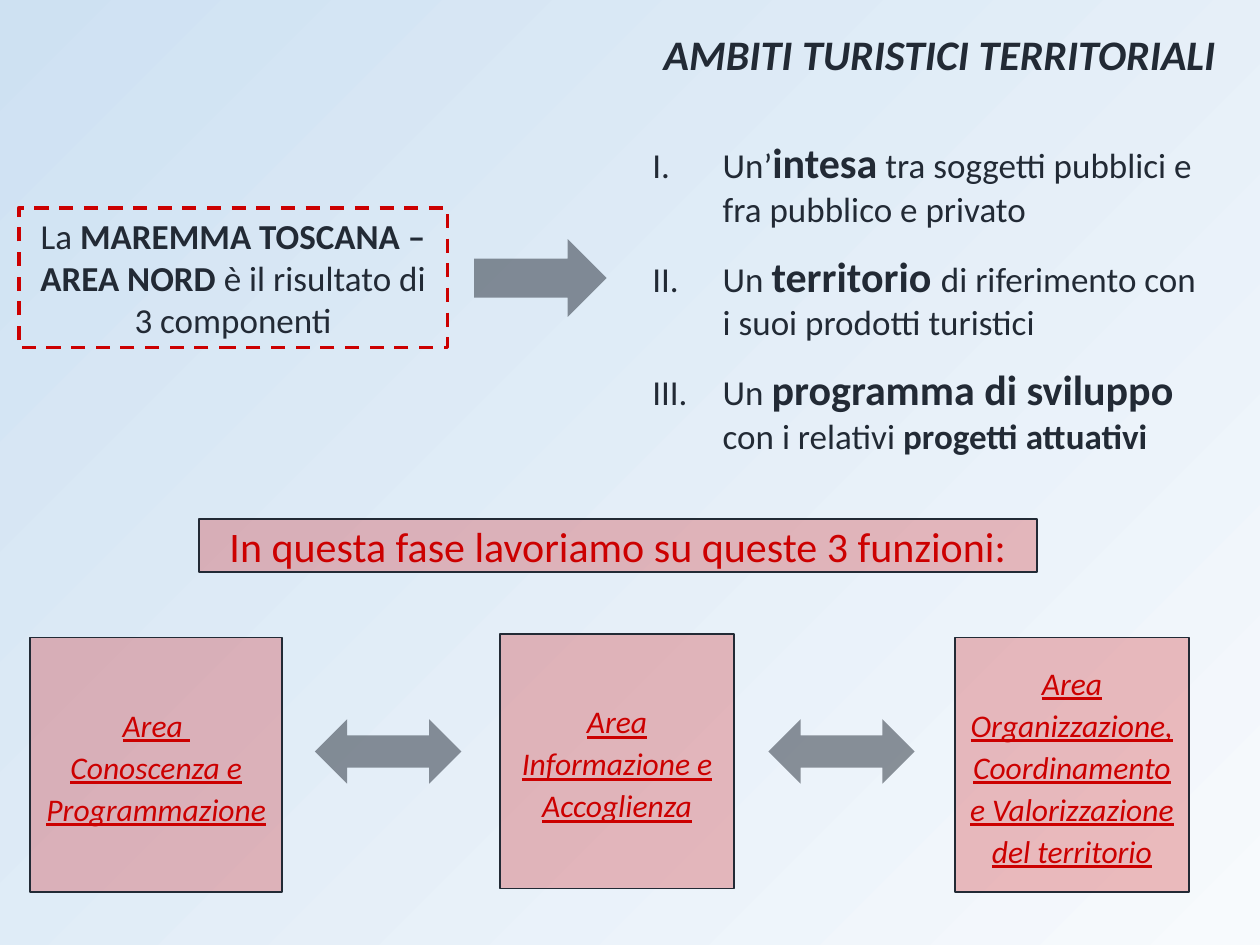
from lxml import etree
from pptx import Presentation
from pptx.dml.color import RGBColor
from pptx.enum.dml import MSO_LINE
from pptx.enum.shapes import MSO_SHAPE as SHAPE
from pptx.enum.text import MSO_ANCHOR as ANCHOR, MSO_AUTO_SIZE as AUTO, PP_ALIGN as ALIGN
from pptx.oxml.ns import qn
from pptx.util import Cm, Pt

DARK = RGBColor(0x22, 0x2A, 0x35)
RED = RGBColor(0xCC, 0x00, 0x00)
PALE = RGBColor(0xF7, 0xFA, 0xFD)
SKY = RGBColor(0xCE, 0xE1, 0xF2)


def set_alpha(parent, percent):
    for clr in parent.iter(qn("a:srgbClr")):
        etree.SubElement(clr, qn("a:alpha"), val=str(percent * 1000))


def add_box(slide, kind, x, y, w, h, fill=None, alpha=100, line=None, width=1):
    sp = slide.shapes.add_shape(kind, Cm(x), Cm(y), Cm(w), Cm(h))
    sp.shadow.inherit = False
    if fill is None:
        sp.fill.background()
    else:
        sp.fill.solid()
        sp.fill.fore_color.rgb = fill
        set_alpha(sp.fill._xPr.find(qn("a:solidFill")), alpha)
    if line is None:
        sp.line.fill.background()
    else:
        sp.line.color.rgb = line
        sp.line.width = Pt(width)
    sp.text_frame.word_wrap = True
    sp.text_frame.vertical_anchor = ANCHOR.MIDDLE
    return sp


def add_arrow(slide, kind, x, y, w, h):
    return add_box(slide, kind, x, y, w, h, DARK, 50)


def add_panel(slide, x, y, w, h):
    return add_box(slide, SHAPE.FLOWCHART_PROCESS, x, y, w, h, RED, 25, DARK)


def add_text_box(slide, x, y, w, h):
    tf = slide.shapes.add_textbox(Cm(x), Cm(y), Cm(w), Cm(h)).text_frame
    tf.word_wrap = True
    return tf


def add_run(p, text, size, color, bold=False, italic=False, underline=False):
    r = p.add_run()
    r.text = text
    font = r.font
    font.name, font.size, font.color.rgb = "Calibri", Pt(size), color
    font.bold, font.italic, font.underline = bold, italic, underline


def add_para(tf, index, align=ALIGN.CENTER, space=None):
    p = tf.paragraphs[0] if index == 0 else tf.add_paragraph()
    p.alignment = align
    if space is not None:
        p.space_before = p.space_after = Pt(space)
    return p


def add_background(slide):
    fill = slide.background.fill
    fill.gradient()
    fill.gradient_angle = 135
    for stop, color in zip(fill.gradient_stops, (PALE, SKY)):
        stop.color.rgb = color
    set_alpha(slide.background._cSld.find(".//" + qn("a:gs") + "[2]"), 50)


def add_title(slide, x, y, w, h):
    tf = add_text_box(slide, x, y, w, h)
    tf.auto_size = AUTO.SHAPE_TO_FIT_TEXT
    p = add_para(tf, 0)
    p.space_after = Pt(44.6)
    add_run(p, "AMBITI TURISTICI TERRITORIALI", 24, DARK, bold=True, italic=True)


def add_components(slide, x, y, w, h):
    # Dashed box, centred on the height of the region
    box_h = 2.82
    sp = add_box(slide, SHAPE.RECTANGLE, x, y + (h - box_h) / 2 - 0.38, 8.64, box_h,
                 line=RED, width=2)
    sp.line.dash_style = MSO_LINE.DASH
    p = add_para(sp.text_frame, 0, space=6)
    for text, bold in (("La ", False), ("MAREMMA TOSCANA – AREA NORD ", True),
                       ("è il risultato di 3 componenti", False)):
        add_run(p, text, 20, DARK, bold)

    # Arrow towards the list
    add_arrow(slide, SHAPE.DOWN_ARROW, x + 9.73, y + 1.48, 1.57, 2.67).rotation = 270

    # Numbered components
    list_x = 12.52
    tf = add_text_box(slide, x + list_x, y, w - list_x, h)
    tf.vertical_anchor = ANCHOR.MIDDLE
    items = [
        [("Un’", 20, False), ("intesa", 24, True),
         (" tra soggetti pubblici e fra pubblico e privato", 20, False)],
        [("Un ", 20, False), ("territorio ", 24, True),
         ("di riferimento con i suoi prodotti turistici", 20, False)],
        [("Un ", 20, False), ("programma di sviluppo ", 24, True),
         ("con i relativi ", 20, False), ("progetti attuativi", 20, True)],
    ]
    for i, runs in enumerate(items):
        p = add_para(tf, i, ALIGN.LEFT, 6)
        pPr = p._p.get_or_add_pPr()
        pPr.set("marL", str(Cm(1.42)))
        pPr.set("indent", str(-Cm(1.42)))
        etree.SubElement(pPr, qn("a:buFont"), typeface="+mj-lt")
        etree.SubElement(pPr, qn("a:buAutoNum"), type="romanUcPeriod")
        for text, size, bold in runs:
            add_run(p, text, size, DARK, bold)


def add_banner(slide, x, y, w, h):
    sp = add_panel(slide, x, y, w, h)
    add_run(add_para(sp.text_frame, 0), "In questa fase lavoriamo su queste 3 funzioni:", 24, RED)


def add_functions(slide, x, y, h):
    # Panels: left offset, top offset, width, paragraphs
    panels = [
        (0, 0, 5.08, ["Area ", "Conoscenza e Programmazione"]),
        (9.47, -0.07, 4.72, ["Area Informazione e Accoglienza"]),
        (18.64, 0, 4.72,
         ["Area Organizzazione, Coordinamento e Valorizzazione del territorio"]),
    ]
    for dx, dy, w, paragraphs in panels:
        sp = add_panel(slide, x + dx, y + dy, w, h)
        for i, text in enumerate(paragraphs):
            p = add_para(sp.text_frame, i)
            p.line_spacing = Pt(24)
            add_run(p, text, 18, RED, italic=True, underline=True)

    # Double arrows between the panels
    for i in range(2):
        add_arrow(slide, SHAPE.LEFT_RIGHT_ARROW, x + 5.74 + 9.14 * i, y + 1.65, 2.95, 1.3)


def main():
    prs = Presentation()
    prs.slide_width, prs.slide_height = Cm(25.4), Cm(19.05)
    slide = prs.slides.add_slide(prs.slide_layouts[6])
    add_background(slide)
    add_title(slide, 12.9, 0.46, 12.09, 1.27)
    add_components(slide, 0.38, 2.79, 24.25, 6.38)
    add_banner(slide, 4.01, 10.46, 16.89, 1.07)
    add_functions(slide, 0.61, 12.85, 5.13)
    prs.save("out.pptx")


if __name__ == "__main__":
    main()
